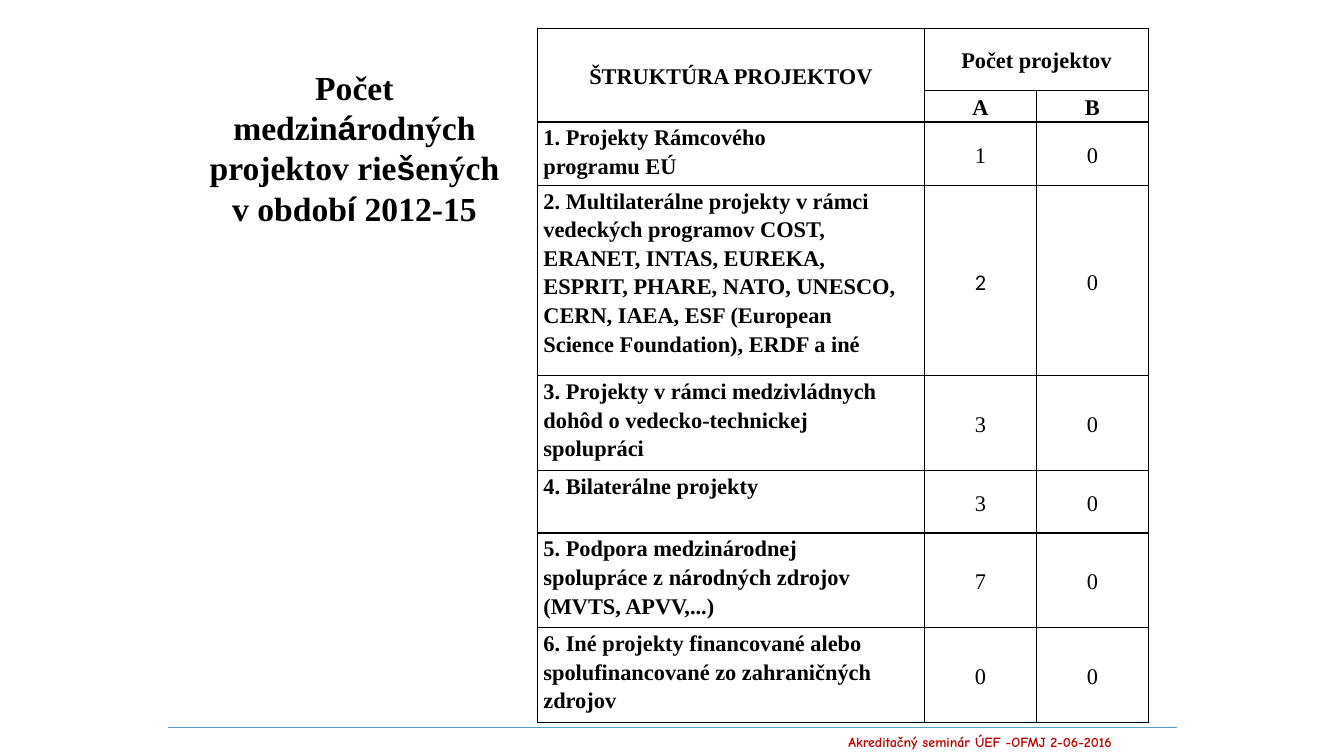
"""Build the slide that counts the international projects solved in 2012-15."""
import copy

import pptx
import pptx.dml.color
import pptx.enum.shapes
import pptx.enum.text
import pptx.oxml
import pptx.oxml.ns
import pptx.util

Inches = pptx.util.Inches
Pt = pptx.util.Pt
qn = pptx.oxml.ns.qn
ALIGN = pptx.enum.text.PP_ALIGN
ANCHOR = pptx.enum.text.MSO_ANCHOR
AUTO = pptx.enum.text.MSO_AUTO_SIZE

BLACK = pptx.dml.color.RGBColor(0x00, 0x00, 0x00)
RED = pptx.dml.color.RGBColor(0xC0, 0x00, 0x00)
BLUE = pptx.dml.color.RGBColor(0x5B, 0x9B, 0xD5)
SERIF = "Times New Roman"
SANS = "Arial"

HEADING = [("Počet medzin", SERIF), ("á", SANS), ("rodných projektov rie", SERIF),
           ("š", SANS), ("ených v obdob", SERIF), ("í", SANS), (" 2012-15", SERIF)]
PROJECTS = [
    ("1. Projekty Rámcového\nprogramu EÚ", 1, 0),
    ("2. Multilaterálne projekty v rámci\nvedeckých programov COST,\n"
     "ERANET, INTAS, EUREKA,\nESPRIT, PHARE, NATO, UNESCO,\n"
     "CERN, IAEA, ESF (European\nScience Foundation), ERDF a iné", 2, 0),
    ("3. Projekty v rámci medzivládnych\ndohôd o vedecko-technickej\nspolupráci", 3, 0),
    ("4. Bilaterálne projekty", 3, 0),
    ("5. Podpora medzinárodnej\nspolupráce z národných zdrojov\n(MVTS, APVV,...)", 7, 0),
    ("6. Iné projekty financované alebo\nspolufinancované zo zahraničných\nzdrojov", 0, 0),
]
COLUMN_WIDTHS = [3.84, 1.11, 1.11]
ROW_HEIGHTS = [0.62, 0.31, 0.63, 1.89, 0.94, 0.62, 0.94, 0.94]


class ProjectSlide:
    def __init__(self, deck):
        self.slide = deck.slides.add_slide(deck.slide_layouts[5])
        self.shapes = self.slide.shapes

    def apply(self, target, **values):
        for name, value in values.items():
            setattr(target, name, value)

    def style(self, font, color=BLACK, **values):
        self.apply(font, **values)
        font.color.rgb = color

    def title(self, pieces, left, top, width, height):
        heading = self.shapes.title
        self.apply(heading, left=Inches(left), top=Inches(top),
                   width=Inches(width), height=Inches(height))
        self.apply(heading.text_frame, word_wrap=True, vertical_anchor=ANCHOR.MIDDLE,
                   auto_size=AUTO.SHAPE_TO_FIT_TEXT)
        line = heading.text_frame.paragraphs[0]
        line.alignment = ALIGN.CENTER
        for words, typeface in pieces:
            run = line.add_run()
            run.text = words
            self.style(run.font, name=typeface, size=Pt(24), bold=True)

    def border(self, cell):
        properties = cell._tc.get_or_add_tcPr()
        for position, side in enumerate(("lnL", "lnR", "lnT", "lnB")):
            properties.insert(position, pptx.oxml.parse_xml(
                f'<a:{side} {pptx.oxml.ns.nsdecls("a")} w="12700"><a:solidFill>'
                f'<a:srgbClr val="{BLACK}"/></a:solidFill></a:{side}>'))

    def cell(self, cell, words, centred=True, bold=True, typeface=SERIF):
        self.apply(cell, margin_left=0 if centred else Inches(0.06), margin_right=0,
                   margin_top=0, margin_bottom=0,
                   vertical_anchor=ANCHOR.MIDDLE if centred else ANCHOR.TOP)
        line = cell.text_frame.paragraphs[0]
        self.apply(line, text=words, line_spacing=1.15,
                   alignment=ALIGN.CENTER if centred else ALIGN.LEFT)
        for run in line.runs:
            self.style(run.font, name=typeface, size=Pt(16), bold=bold)
        for line_break in line._p.findall(qn("a:br")):
            line_break.append(copy.deepcopy(line.runs[0]._r.find(qn("a:rPr"))))

    def table(self, projects, left, top):
        grid = self.shapes.add_table(
            len(ROW_HEIGHTS), len(COLUMN_WIDTHS), Inches(left), Inches(top),
            Inches(sum(COLUMN_WIDTHS)), Inches(sum(ROW_HEIGHTS))).table
        self.apply(grid, first_row=False, horz_banding=False)
        for column, width in zip(grid.columns, COLUMN_WIDTHS):
            column.width = Inches(width)
        for row, height in zip(grid.rows, ROW_HEIGHTS):
            row.height = Inches(height)
        for cell in grid.iter_cells():
            cell.fill.background()
            self.border(cell)
        grid.cell(0, 0).merge(grid.cell(1, 0))
        grid.cell(0, 1).merge(grid.cell(0, 2))
        headers = {(0, 0): "ŠTRUKTÚRA PROJEKTOV", (0, 1): "Počet projektov",
                   (1, 1): "A", (1, 2): "B"}
        for place, words in headers.items():
            self.cell(grid.cell(*place), words)
        for row, (label, *counts) in enumerate(projects, 2):
            self.cell(grid.cell(row, 0), label, centred=False)
            for column, count in enumerate(counts, 1):
                typeface = "Calibri" if (row, column) == (3, 1) else SERIF
                self.cell(grid.cell(row, column), str(count), bold=False, typeface=typeface)

    def rule(self, left, right, height):
        rule = self.shapes.add_connector(
            pptx.enum.shapes.MSO_CONNECTOR.STRAIGHT,
            Inches(left), Inches(height), Inches(right), Inches(height))
        rule.line.color.rgb = BLUE
        rule.line.width = Pt(0.5)
        rule._element.spPr.append(pptx.oxml.parse_xml(
            f'<a:effectLst {pptx.oxml.ns.nsdecls("a")}/>'))

    def footer(self, words, left, top, width, height):
        seminar = self.shapes.add_textbox(
            Inches(left), Inches(top), Inches(width), Inches(height))
        self.apply(seminar.text_frame, word_wrap=False, auto_size=AUTO.SHAPE_TO_FIT_TEXT)
        line = seminar.text_frame.paragraphs[0]
        self.apply(line, text=words, alignment=ALIGN.CENTER)
        self.style(line.runs[0].font, RED, name="Comic Neue", size=Pt(10), bold=True)


def main():
    deck = pptx.Presentation()
    deck.slide_width = Inches(13.33)
    deck.slide_height = Inches(7.5)
    page = ProjectSlide(deck)
    page.title(HEADING, 1.94, 0.6, 3.15, 1.72)
    page.table(PROJECTS, 5.33, 0.28)
    page.rule(1.67, 11.67, 7.22)
    page.footer("Akreditačný seminár ÚEF -OFMJ 2-06-2016", 8.06, 7.23, 3.32, 0.27)
    deck.save("out.pptx")


if __name__ == "__main__":
    main()
